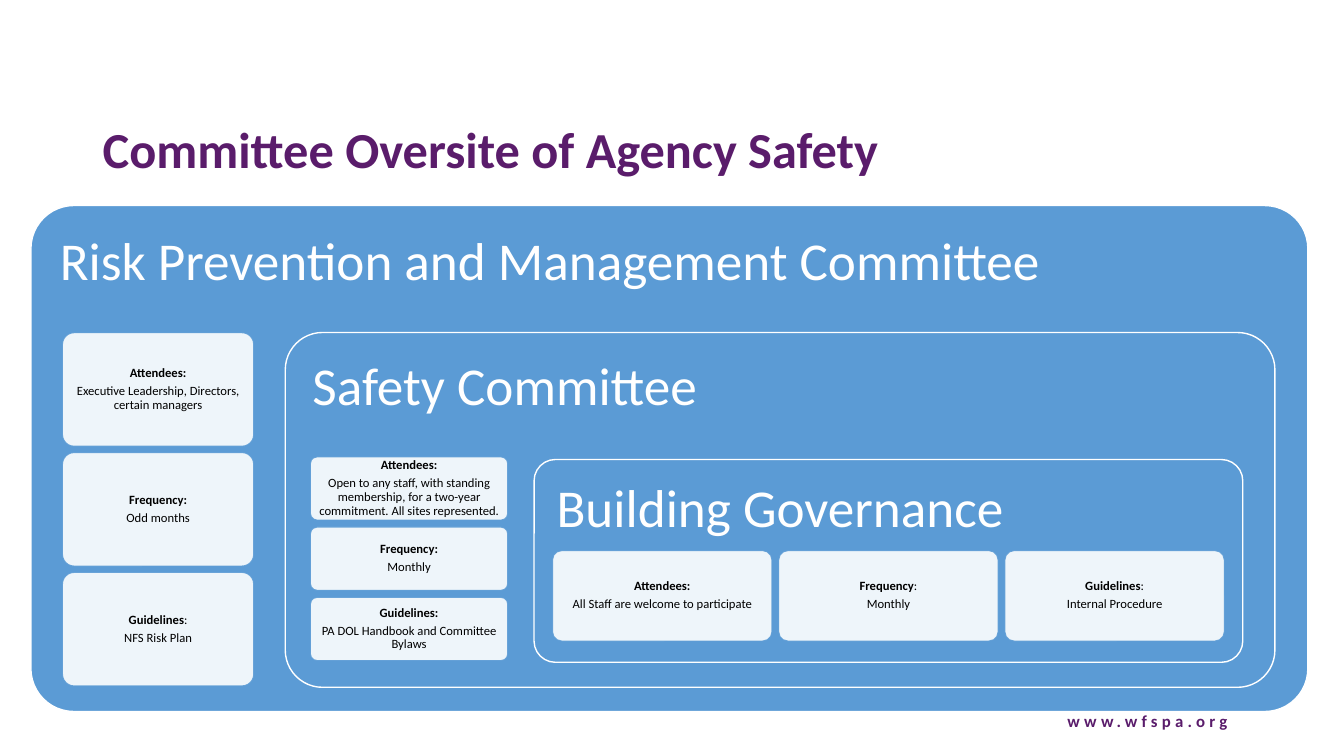
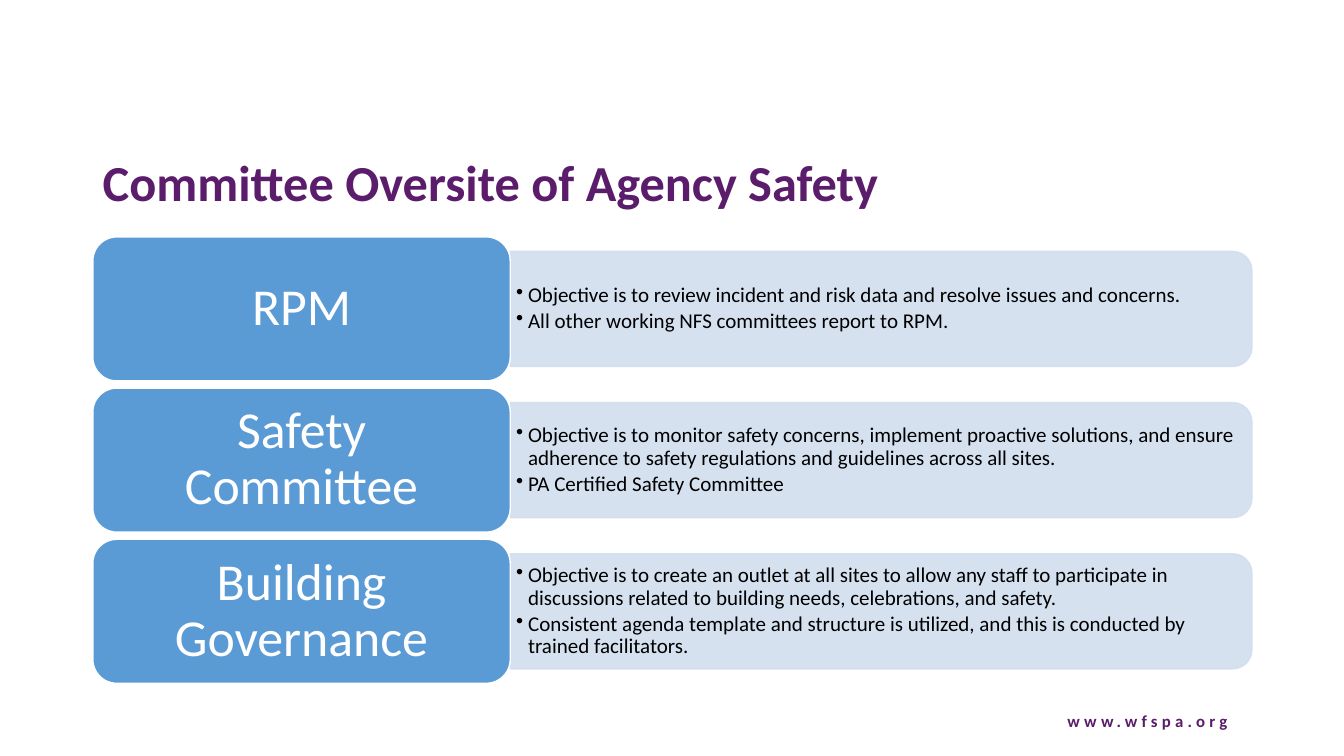
"""Build two slides on the committees that oversee agency safety."""
from lxml import etree
from pptx import Presentation
from pptx import util as u
from pptx.dml.color import RGBColor
from pptx.enum import shapes, text
from pptx.oxml.ns import qn

rgb = RGBColor.from_string
PURPLE, BLUE, PALE, WHITE, BLACK = "5A1C6B", "5B9BD5", "D2DEEF", "FFFFFF", "000000"
ROUNDED = shapes.MSO_SHAPE.ROUNDED_RECTANGLE
HALF_ROUNDED = shapes.MSO_SHAPE.ROUND_2_SAME_RECTANGLE
LEFT, CENTER = text.PP_ALIGN.LEFT, text.PP_ALIGN.CENTER
TOP, MIDDLE = text.MSO_ANCHOR.TOP, text.MSO_ANCHOR.MIDDLE


def add_panel(page, kind, place, fill, line, opacity=100):
    """Add a filled shape at a place given in centimetres."""
    panel = page.shapes.add_shape(kind, *map(u.Cm, place))
    panel.shadow.inherit = False
    panel.fill.solid()
    panel.fill.fore_color.rgb = rgb(fill)
    panel.line.color.rgb = rgb(line)
    panel.line.width = u.Pt(1)
    if opacity < 100:
        for colour in panel.element.spPr.iter(qn("a:srgbClr")):
            etree.SubElement(colour, qn("a:alpha")).set("val", str(opacity * 1000))
    return panel


def write(box, lines, size, colour, align=LEFT, anchor=MIDDLE, inset=(0.25, 0.13),
          after=0, bullet=False):
    """Fill a box with lines, each a list of (words, bold) spans."""
    frame = box.text_frame
    frame.word_wrap = True
    frame.vertical_anchor = anchor
    frame.margin_left = frame.margin_right = u.Cm(inset[0])
    frame.margin_top = frame.margin_bottom = u.Cm(inset[1])
    for number, line in enumerate(lines):
        para = frame.add_paragraph() if number else frame.paragraphs[0]
        if bullet:
            props = para._p.get_or_add_pPr()
            props.set("marL", str(u.Cm(0.3)))
            props.set("indent", str(-u.Cm(0.3)))
            etree.SubElement(props, qn("a:buChar")).set("char", "•")
        para.alignment = align
        para.line_spacing = 0.9
        para.space_after = u.Pt(size * after)
        para.font.name = "Calibri"
        para.font.size = u.Pt(size)
        para.font.color.rgb = rgb(colour)
        for words, bold in line:
            span = para.add_run()
            span.text = words
            span.font.bold = bold


deck = Presentation()
deck.slide_width, deck.slide_height = u.Cm(33.87), u.Cm(19.05)

pages = []
for title_top in (2.95, 3.78):
    page = deck.slides.add_slide(deck.slide_layouts[6])
    footer = page.shapes.add_textbox(*map(u.Cm, (26.29, 17.65, 5.26, 1.02)))
    write(footer, [[("www.wfspa.org", True)]], 12, PURPLE, CENTER)
    footer_para = footer.text_frame.paragraphs[0]
    footer_para.line_spacing = 1.0
    footer_para.runs[0]._r.get_or_add_rPr().set("spc", "300")
    title = page.shapes.add_textbox(*map(u.Cm, (2.34, title_top, 29.21, 1.75)))
    write(title, [[("Committee Oversite of Agency Safety", True)]], 36, PURPLE)
    pages.append(page)
nested_page, objectives_page = pages

committees = [
    ("Risk Prevention and Management Committee", (0.78, 5.18, 32.18, 12.75), 0.085,
     (1.57, 8.38, 4.83, 2.87), (0, 3.02),
     [("Attendees:", "", "Executive Leadership, Directors, certain managers"),
      ("Frequency:", "", "Odd months"),
      ("Guidelines", ":", "NFS Risk Plan")]),
    ("Safety Committee", (7.19, 8.38, 24.94, 8.94), 0.105,
     (7.82, 11.51, 4.98, 1.6), (0, 1.77),
     [("Attendees:", "", "Open to any staff, with standing membership, "
       "for a two-year commitment. All sites represented."),
      ("Frequency:", "", "Monthly"),
      ("Guidelines:", "", "PA DOL Handbook and Committee Bylaws")]),
    ("Building Governance", (13.46, 11.58, 17.86, 5.11), 0.105,
     (13.92, 13.87, 5.54, 2.29), (5.7, 0),
     [("Attendees:", "", "All Staff are welcome to participate"),
      ("Frequency", ":", "Monthly"),
      ("Guidelines", ":", "Internal Procedure")]),
]
for name, place, corner, (left, top, width, height), (step_x, step_y), cards in committees:
    panel = add_panel(nested_page, ROUNDED, place, BLUE, WHITE)
    panel.adjustments[0] = corner
    write(panel, [[(name, False)]], 38, WHITE, anchor=TOP, inset=(0.41, 0.41), after=0.35)
    for index, (label, colon, detail) in enumerate(cards):
        card_place = (left + index * step_x, top + index * step_y, width, height)
        card = add_panel(nested_page, ROUNDED, card_place, WHITE, BLUE, 90)
        card.adjustments[0] = 0.105
        heading = [(label, True)] + ([(colon, False)] if colon else [])
        write(card, [heading, [(detail, False)]], 9, BLACK, CENTER,
              inset=(0.1, 0.1), after=0.35)

objectives = [
    ("RPM",
     ["Objective is to review incident and risk data and resolve issues and concerns.",
      "All other working NFS committees report to RPM."]),
    ("Safety Committee",
     ["Objective is to monitor safety concerns, implement proactive solutions, and ensure "
      "adherence to safety regulations and guidelines across all sites.",
      "PA Certified Safety Committee"]),
    ("Building Governance",
     ["Objective is to create an outlet at all sites to allow any staff to participate in "
      "discussions related to building needs, celebrations, and safety.",
      "Consistent agenda template and structure is utilized, and this is conducted by "
      "trained facilitators."]),
]
label_left, label_width, label_height = 2.34, 10.52, 3.63
bar_left, bar_length, bar_height = label_left + label_width, 18.69, 2.9
turn_shift = (bar_length - bar_height) / 2
for index, (name, points) in enumerate(objectives):
    label_top = 5.97 + index * 3.81
    bar_top = label_top + (label_height - bar_height) / 2
    bar_place = (bar_left + turn_shift, bar_top - turn_shift, bar_height, bar_length)
    bar = add_panel(objectives_page, HALF_ROUNDED, bar_place, PALE, PALE, 90)
    bar.rotation = 90
    box = objectives_page.shapes.add_textbox(
        *map(u.Cm, (bar_left, bar_top, bar_length - 0.15, bar_height)))
    write(box, [[(point, False)] for point in points], 15, BLACK,
          inset=(0.15, 0.08), after=0.15, bullet=True)
    label = add_panel(objectives_page, ROUNDED,
                      (label_left, label_top, label_width, label_height), BLUE, WHITE)
    write(label, [[(name, False)]], 37, WHITE, CENTER, inset=(0.38, 0.2), after=0.35)

deck.save("out.pptx")
